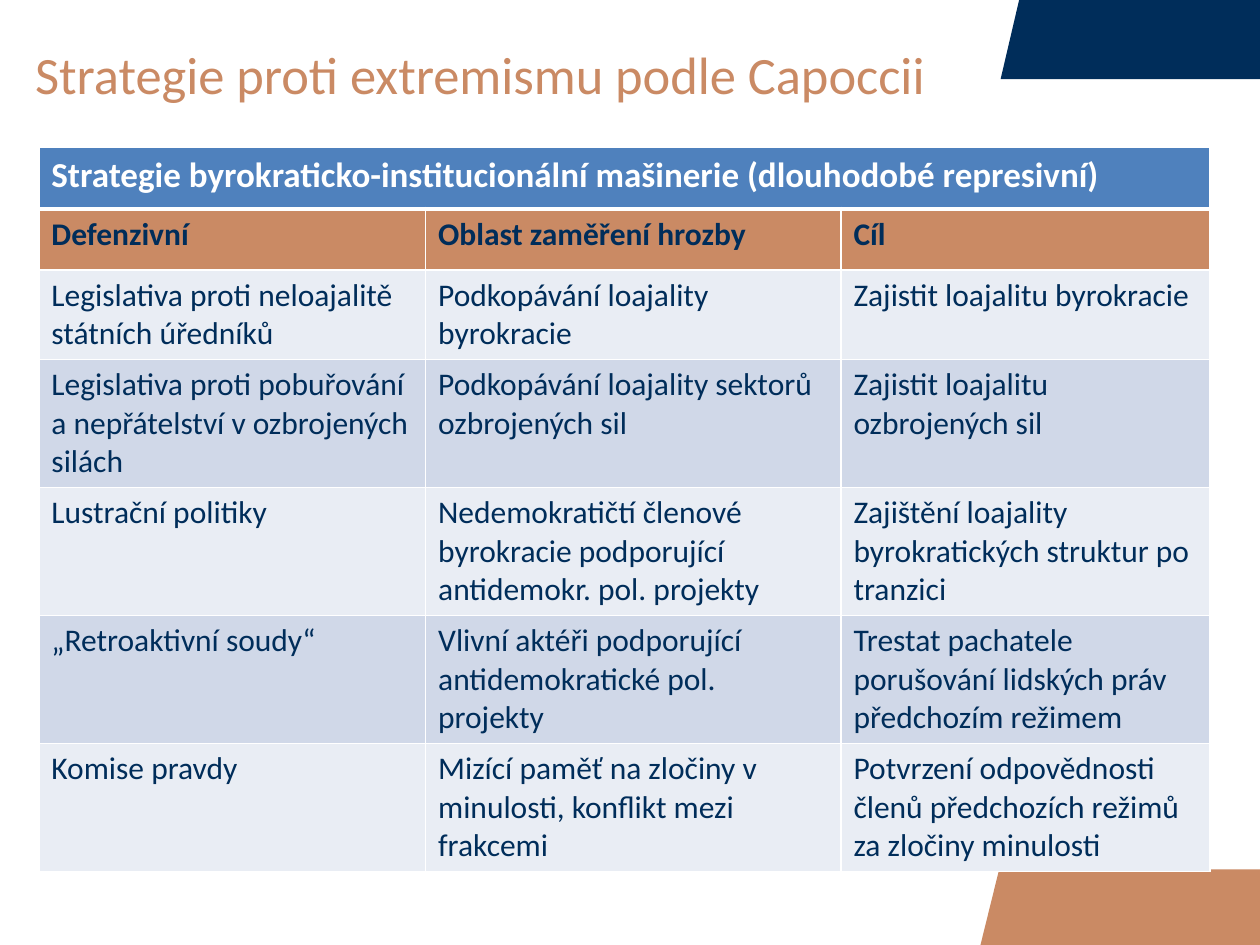
from lxml.etree import SubElement
from pptx import Presentation
from pptx.dml.color import RGBColor
from pptx.enum.text import MSO_ANCHOR, PP_ALIGN
from pptx.oxml.ns import qn
from pptx.util import Pt

NAVY = RGBColor(0x00, 0x2D, 0x5A)
COPPER = RGBColor(0xCA, 0x8A, 0x64)
BLUE = RGBColor(0x4F, 0x81, 0xBD)
LIGHT_BAND = RGBColor(0xE9, 0xED, 0xF4)
DARK_BAND = RGBColor(0xD0, 0xD8, 0xE8)
WHITE = RGBColor(0xFF, 0xFF, 0xFF)

TITLE = "Strategie proti extremismu podle Capoccii"
TABLE_HEADING = "Strategie byrokraticko-institucionální mašinerie (dlouhodobé represivní)"
ROWS = [
    ("Defenzivní", "Oblast zaměření hrozby", "Cíl"),
    ("Legislativa proti neloajalitě státních úředníků",
     "Podkopávání loajality byrokracie",
     "Zajistit loajalitu byrokracie"),
    ("Legislativa proti pobuřování a nepřátelství v ozbrojených silách",
     "Podkopávání loajality sektorů ozbrojených sil",
     "Zajistit loajalitu ozbrojených sil"),
    ("Lustrační politiky",
     "Nedemokratičtí členové byrokracie podporující antidemokr. pol. projekty",
     "Zajištění loajality byrokratických struktur po tranzici"),
    ("„Retroaktivní soudy“",
     "Vlivní aktéři podporující antidemokratické pol. projekty",
     "Trestat pachatele porušování lidských práv předchozím režimem"),
    ("Komise pravdy",
     "Mizící paměť na zločiny v minulosti, konflikt mezi frakcemi",
     "Potvrzení odpovědnosti členů předchozích režimů za zločiny minulosti"),
]


class SlideBuilder:
    font_name = "Calibri"

    def __init__(self, slide):
        self.slide = slide

    def set_text(self, text_frame, text, size, color, bold=False):
        paragraph = text_frame.paragraphs[0]
        paragraph.alignment = PP_ALIGN.LEFT
        run = paragraph.add_run()
        run.text = text
        formats = {"name": self.font_name, "size": Pt(size), "bold": bold}
        for name, value in formats.items():
            setattr(run.font, name, value)
        run.font.color.rgb = color

    def add_corner(self, points, color):
        start, *others = [(Pt(x), Pt(y)) for x, y in points]
        builder = self.slide.shapes.build_freeform(*start)
        builder.add_line_segments(others, close=True)
        shape = builder.convert_to_shape()
        shape.shadow.inherit = False
        shape.fill.solid()
        shape.fill.fore_color.rgb = color
        shape.line.fill.background()

    def add_title(self, text, width, height):
        title = self.slide.shapes.title
        box = {"left": 0, "top": 0, "width": width, "height": height}
        for name, value in box.items():
            setattr(title, name, Pt(value))
        frame = title.text_frame
        formats = {"margin_left": Pt(20), "margin_right": Pt(20),
                   "vertical_anchor": MSO_ANCHOR.MIDDLE, "word_wrap": True}
        for name, value in formats.items():
            setattr(frame, name, value)
        self.set_text(frame, text, 30, COPPER)

    def set_borders(self, cell, bottom_width):
        properties = cell._tc.get_or_add_tcPr()
        widths = {"lnL": 1, "lnR": 1, "lnT": 1, "lnB": bottom_width}
        for side, width in widths.items():
            line = SubElement(properties, qn(f"a:{side}"), w=str(Pt(width)))
            fill = SubElement(line, qn("a:solidFill"))
            SubElement(fill, qn("a:srgbClr"), val=str(WHITE))

    def fill_cell(self, cell, color, bottom_width=1):
        self.set_borders(cell, bottom_width)
        cell.fill.solid()
        cell.fill.fore_color.rgb = color

    def add_table(self, heading, rows, left, top, column_widths, row_height):
        row_count = len(rows) + 1
        table = self.slide.shapes.add_table(
            row_count, len(column_widths), Pt(left), Pt(top),
            Pt(sum(column_widths)), Pt(row_height * row_count)).table
        for column, width in zip(table.columns, column_widths):
            column.width = Pt(width)
        for row in table.rows:
            row.height = Pt(row_height)

        for cell in table.rows[0].cells:
            self.fill_cell(cell, BLUE, bottom_width=3)
        heading_cell = table.cell(0, 0)
        heading_cell.merge(table.cell(0, len(column_widths) - 1))
        self.set_text(heading_cell.text_frame, heading, 20, WHITE, bold=True)

        for row_index, texts in enumerate(rows, start=1):
            is_header = row_index == 1
            band = DARK_BAND if row_index % 2 else LIGHT_BAND
            for column_index, text in enumerate(texts):
                cell = table.cell(row_index, column_index)
                self.fill_cell(cell, COPPER if is_header else band)
                self.set_text(cell.text_frame, text, 18, NAVY, bold=is_header)


def main():
    presentation = Presentation()
    presentation.slide_width = Pt(720)
    presentation.slide_height = Pt(540)
    title_only = presentation.slide_layouts[5]
    builder = SlideBuilder(presentation.slides.add_slide(title_only))

    builder.add_corner([(571.8, 45.2), (582.4, 0), (720, 0), (720, 45.2)], NAVY)
    builder.add_corner([(560.3, 540), (571, 496.8), (720, 496.8), (720, 540)], COPPER)
    builder.add_title(TITLE, 720, 84.4)
    builder.add_table(TABLE_HEADING, ROWS, 22.2, 84.4, (221, 237.4, 211), 35)
    presentation.save("out.pptx")


if __name__ == "__main__":
    main()
